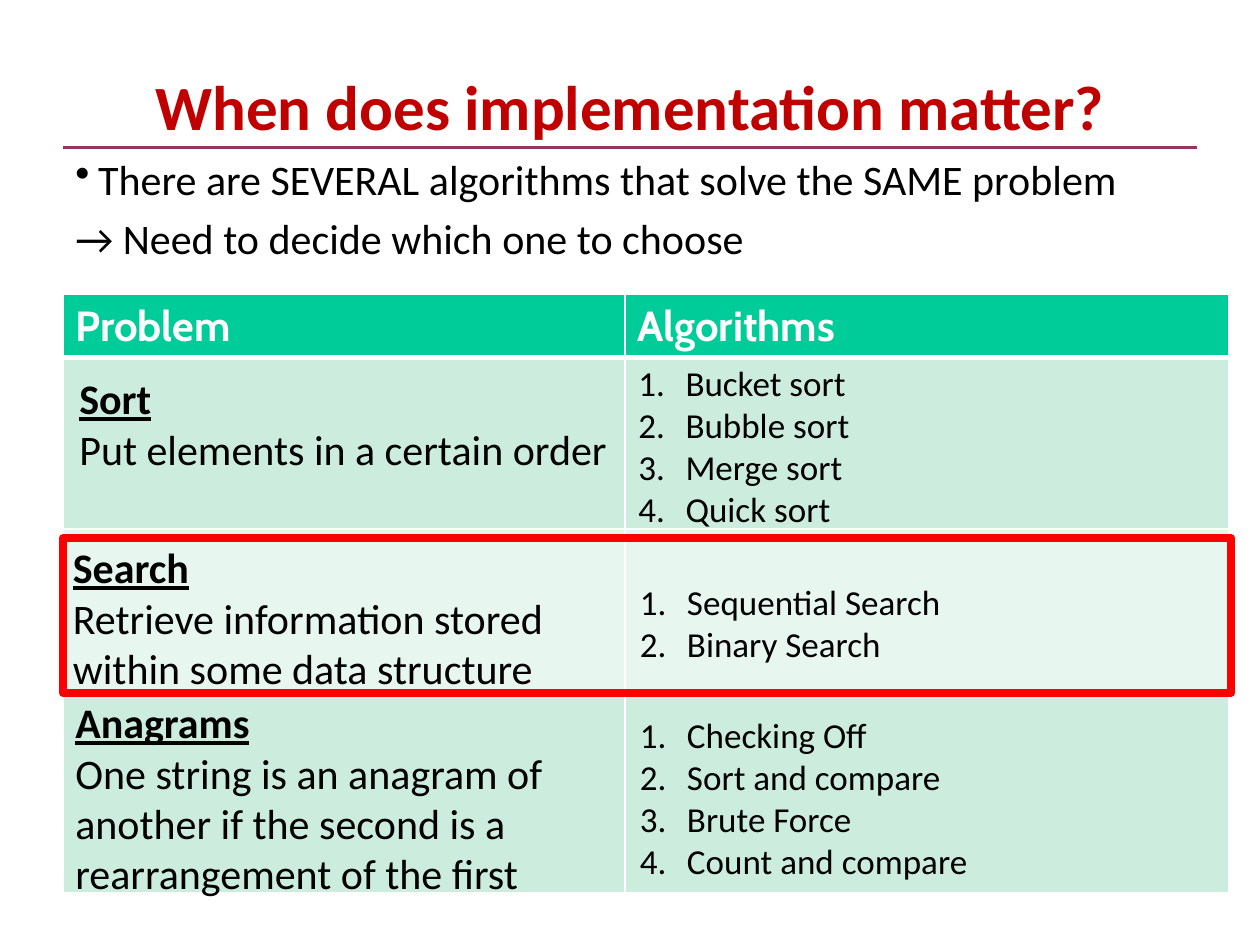
from lxml.etree import SubElement
from pptx import Presentation
from pptx.dml.color import RGBColor
from pptx.enum.shapes import MSO_CONNECTOR, MSO_SHAPE
from pptx.enum.text import MSO_ANCHOR, PP_ALIGN
from pptx.oxml.ns import qn
from pptx.util import Cm, Pt

BLACK = RGBColor(0x00, 0x00, 0x00)
WHITE = RGBColor(0xFF, 0xFF, 0xFF)
TITLE_RED = RGBColor(0xC0, 0x00, 0x00)
FRAME_RED = RGBColor(0xFF, 0x00, 0x00)
PLUM = RGBColor(0x99, 0x33, 0x66)
GREEN = RGBColor(0x00, 0xCC, 0x99)
MINT = RGBColor(0xCC, 0xEC, 0xDE)
PALE_MINT = RGBColor(0xE7, 0xF6, 0xEF)


def add_text(left, top, width, height, lines, size, color=BLACK):
    """Add a wrapping text box with one Calibri paragraph per line; return its frame."""
    frame = slide.shapes.add_textbox(Cm(left), Cm(top), Cm(width), Cm(height)).text_frame
    frame.word_wrap = True
    frame.text = "\n".join(lines)
    for paragraph in frame.paragraphs:
        paragraph.font.name = "Calibri"
        paragraph.font.size = Pt(size)
        paragraph.font.color.rgb = color
    return frame


def add_bullet(paragraph, indent, tag, **attributes):
    """Give the paragraph a hanging indent and a bullet element."""
    properties = paragraph._p.get_or_add_pPr()
    properties.set("marL", str(Cm(indent)))
    properties.set("indent", str(-Cm(indent)))
    SubElement(properties, qn(tag), **attributes)


prs = Presentation()
prs.slide_width, prs.slide_height = Cm(25.4), Cm(19.05)
slide = prs.slides.add_slide(prs.slide_layouts[6])

# Title and rule
rule = slide.shapes.add_connector(MSO_CONNECTOR.STRAIGHT, Cm(1.27), Cm(2.97), Cm(24.13), Cm(2.97))
rule.line.color.rgb = PLUM
rule.line.width = Pt(2)
SubElement(rule._element.spPr, qn("a:effectLst"))

title = add_text(1.27, 1.27, 22.86, 1.7, ["When does implementation matter?"], 36, TITLE_RED)
title.vertical_anchor = MSO_ANCHOR.MIDDLE
title.paragraphs[0].alignment = PP_ALIGN.CENTER
title.paragraphs[0].font.bold = True

# Introduction
intro = add_text(1.27, 2.97, 23.7, 2.9, [
    "There are SEVERAL algorithms that solve the SAME problem",
    "→ Need to decide which one to choose",
], 24)
for paragraph in intro.paragraphs:
    paragraph.space_before = Pt(4.8)
add_bullet(intro.paragraphs[0], 0.46, "a:buChar", char="•")

# Table grid
row_heights = [1.24, 3.45, 3.28, 4.06]
row_fills = [GREEN, MINT, PALE_MINT, MINT]
column_widths = [11.33, 12.17]
grid = slide.shapes.add_table(4, 2, Cm(1.27), Cm(5.94), Cm(sum(column_widths)),
                              Cm(sum(row_heights))).table
for column, width in zip(grid.columns, column_widths):
    column.width = Cm(width)
for row_index, (height, fill) in enumerate(zip(row_heights, row_fills)):
    grid.rows[row_index].height = Cm(height)
    for cell in grid.rows[row_index].cells:
        cell_properties = cell._tc.get_or_add_tcPr()
        for side in ("L", "R", "T", "B"):
            is_header_edge = (row_index, side) in ((0, "B"), (1, "T"))
            border = SubElement(cell_properties, qn(f"a:ln{side}"),
                                w=str(Pt(3 if is_header_edge else 1)))
            SubElement(SubElement(border, qn("a:solidFill")), qn("a:srgbClr"), val=str(WHITE))
        cell.fill.solid()
        cell.fill.fore_color.rgb = fill

for cell, heading in zip(grid.rows[0].cells, ["Problem", "Algorithms"]):
    cell.text = heading
    heading_font = cell.text_frame.paragraphs[0].font
    heading_font.name = "Cabin"
    heading_font.size = Pt(24)
    heading_font.bold = True
    heading_font.color.rgb = WHITE

# Problems on the left, their algorithms on the right: (left, top, height), lines
problems = [
    ((1.35, 7.39, 2.31), ["Sort", "Put elements in a certain order"]),
    ((1.22, 10.8, 3.33), ["Search", "Retrieve information stored", "within some data structure"]),
    ((1.27, 13.92, 4.37), ["Anagrams", "One string is an anagram of another if the second "
                           "is a rearrangement of the first"]),
]
algorithms = [
    ((12.62, 7.16, 3.68), ["Bucket sort", "Bubble sort", "Merge sort", "Quick sort"]),
    ((12.65, 11.58, 1.96), ["Sequential Search", "Binary Search"]),
    ((12.65, 14.25, 3.68), ["Checking Off", "Sort and compare", "Brute Force",
                            "Count and compare"]),
]
for (left, top, height), lines in problems:
    name = add_text(left, top, 12.45, height, lines, 24).paragraphs[0]
    name.font.bold = True
    name.font.underline = True
for (left, top, height), lines in algorithms:
    for paragraph in add_text(left, top, 12.7, height, lines, 20).paragraphs:
        add_bullet(paragraph, 0.95, "a:buAutoNum", type="arabicPeriod")

# Frame around the search row
search_frame = slide.shapes.add_shape(MSO_SHAPE.RECTANGLE, Cm(1.27), Cm(10.85), Cm(23.55), Cm(3.12))
search_frame.shadow.inherit = False
search_frame.fill.background()
search_frame.line.color.rgb = FRAME_RED
search_frame.line.width = Pt(4.5)

prs.save("out.pptx")
